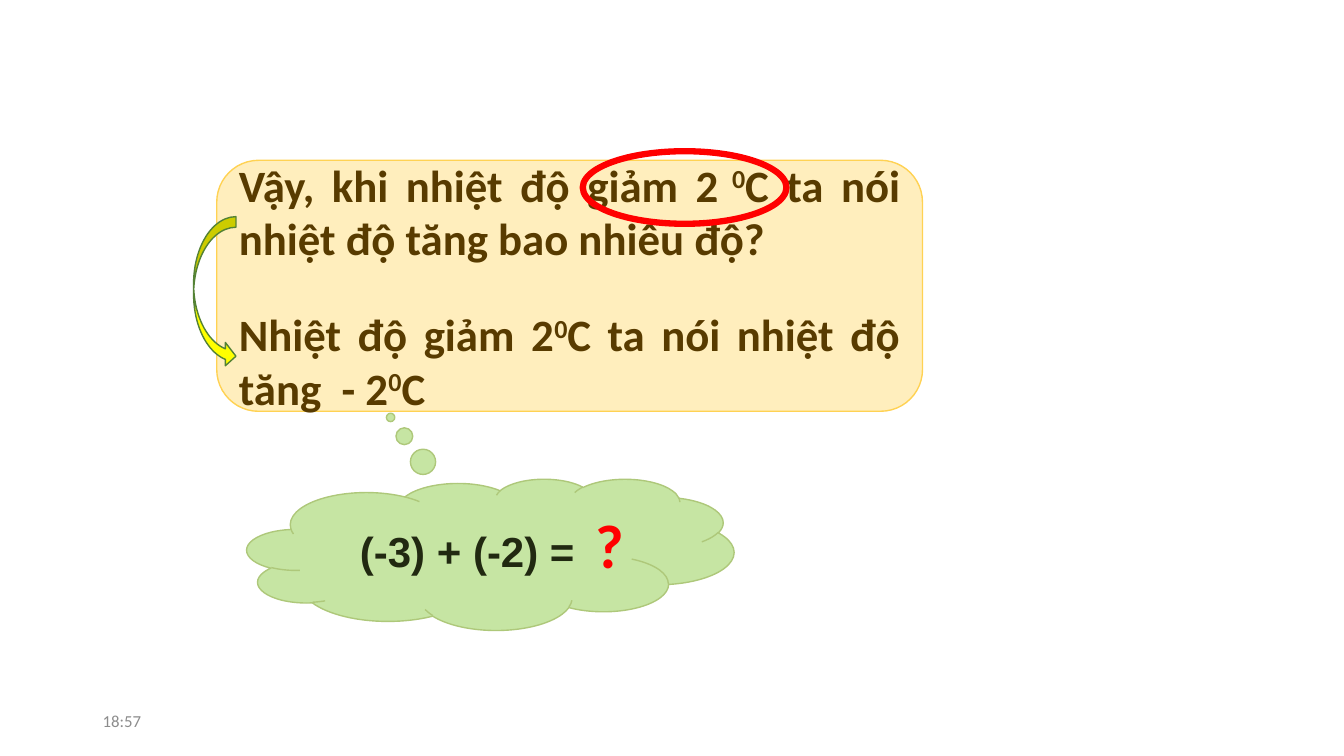
"""Build the slide that asks how a fall in temperature is written as a rise."""
from dataclasses import dataclass
from typing import Optional

from pptx import Presentation
from pptx.dml.color import RGBColor
from pptx.enum.shapes import MSO_SHAPE as SHAPE
from pptx.enum.text import MSO_ANCHOR as ANCHOR, PP_ALIGN as ALIGN
from pptx.util import Inches, Pt


@dataclass
class Para:
    runs: tuple[str, ...]
    size: float
    color: str
    font: str = "Calibri"
    bold: bool = True
    align: ALIGN = ALIGN.LEFT
    before: float = 0


@dataclass
class Item:
    box: tuple[float, float, float, float]
    kind: Optional[SHAPE] = None
    fill: Optional[str] = None
    line: str = ""
    width: float = 1
    adj: tuple[float, ...] = ()
    paras: tuple[Para, ...] = ()
    anchor: ANCHOR = ANCHOR.MIDDLE
    wrap: bool = True


def rgb(color: str) -> RGBColor:
    return RGBColor.from_string(color)


def write(tf, item: Item) -> None:
    tf.word_wrap = item.wrap
    tf.vertical_anchor = item.anchor
    for i, para in enumerate(item.paras):
        p = tf.paragraphs[0] if i == 0 else tf.add_paragraph()
        p.alignment = para.align
        p.space_before = Pt(para.before)
        p.font.name, p.font.size, p.font.bold = para.font, Pt(para.size), para.bold
        p.font.color.rgb = rgb(para.color)
        for j, text in enumerate(para.runs):
            r = p.add_run()
            r.text = text
            if j % 2:
                r.font._element.set("baseline", "30000")


def draw(s, item: Item) -> None:
    box = [Inches(v) for v in item.box]
    if item.kind is None:
        sp = s.shapes.add_textbox(*box)
    else:
        sp = s.shapes.add_shape(item.kind, *box)
        sp.shadow.inherit = False
        for i, value in enumerate(item.adj):
            sp.adjustments[i] = value
        if item.fill:
            sp.fill.solid()
            sp.fill.fore_color.rgb = rgb(item.fill)
        else:
            sp.fill.background()
        sp.line.color.rgb = rgb(item.line)
        sp.line.width = Pt(item.width)
    if item.paras:
        write(sp.text_frame, item)


BROWN, RED = "583B00", "FF0000"
QUESTION = ("Vậy, khi nhiệt độ giảm 2", " 0", "C ta nói nhiệt độ tăng bao nhiêu độ?")
ANSWER = ("Nhiệt độ giảm 2", "0", "C ta nói nhiệt độ tăng  - 2", "0", "C")

ITEMS = (
    Item((0.92, 6.95, 3, 0.4), paras=(Para(("18:57",), 12, "8C8C8C", bold=False),)),
    Item((2.15, 1.59, 7, 2.49), SHAPE.ROUNDED_RECTANGLE, "FFEEBD", "FFD253", paras=(
        Para(QUESTION, 32, BROWN, align=ALIGN.JUSTIFY),
        Para(ANSWER, 32, BROWN, align=ALIGN.JUSTIFY, before=30))),
    Item((1.92, 2.15, 0.42, 1.5), SHAPE.CURVED_RIGHT_ARROW, "FFFF00", "548235",
         adj=(0.25, 0.55, 0.25)),
    Item((2.45, 4.75, 4.83, 1.5), SHAPE.CLOUD_CALLOUT, "C6E5A3", "AEC87A",
         adj=(-0.205, -0.906),
         paras=(Para(("(-3) + (-2) = ",), 30, "212911", "Arial", align=ALIGN.CENTER),)),
    Item((5.81, 4.98, 0.49, 0.84), paras=(Para(("?",), 44, RED),),
         anchor=ANCHOR.TOP, wrap=False),
    Item((5.78, 1.5, 2.02, 0.72), SHAPE.OVAL, line=RED, width=4.5),
)


def main() -> None:
    prs = Presentation()
    prs.slide_width, prs.slide_height = Inches(13.33), Inches(7.5)
    s = prs.slides.add_slide(prs.slide_layouts[6])
    for item in ITEMS:
        draw(s, item)
    prs.save("out.pptx")


if __name__ == "__main__":
    main()
